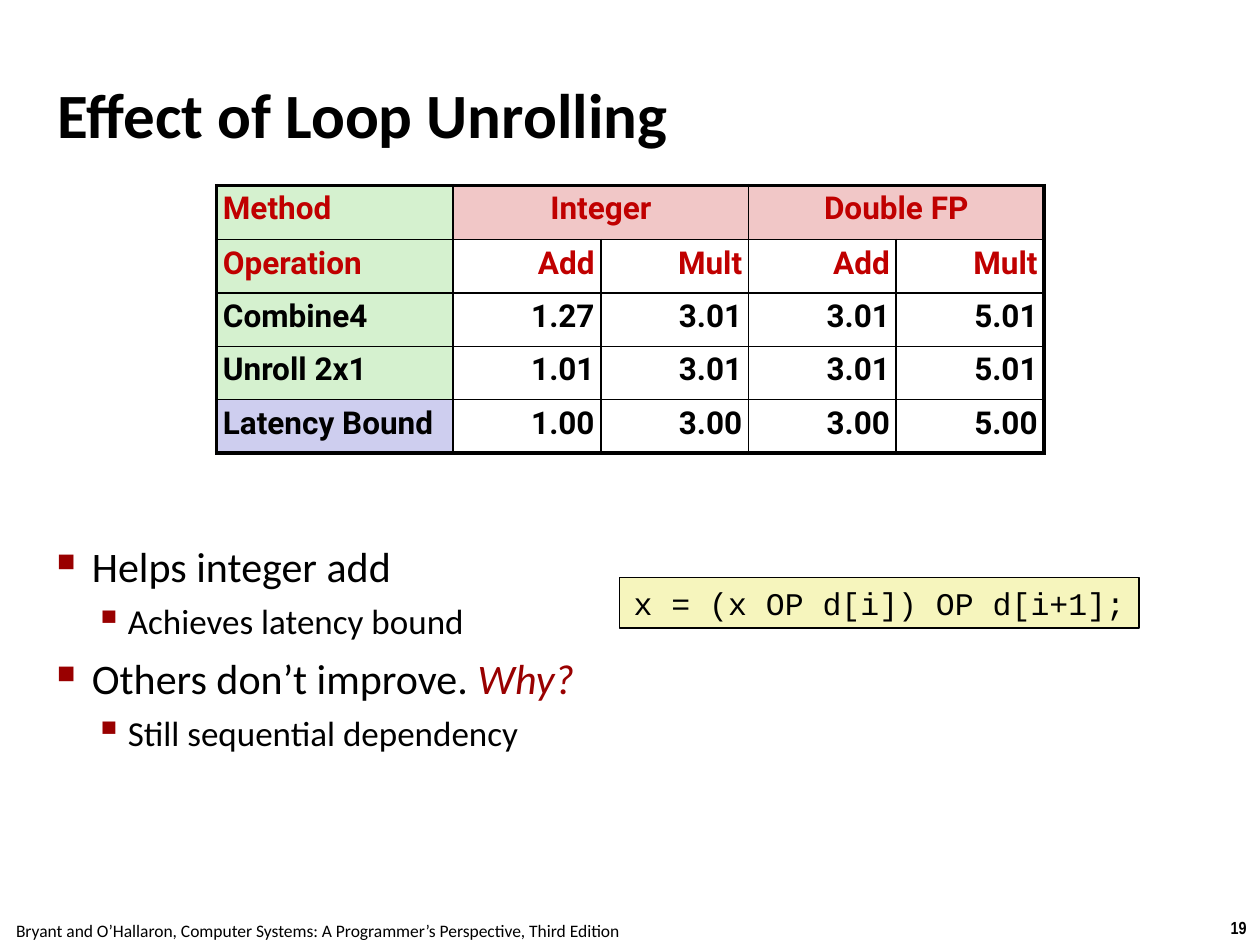
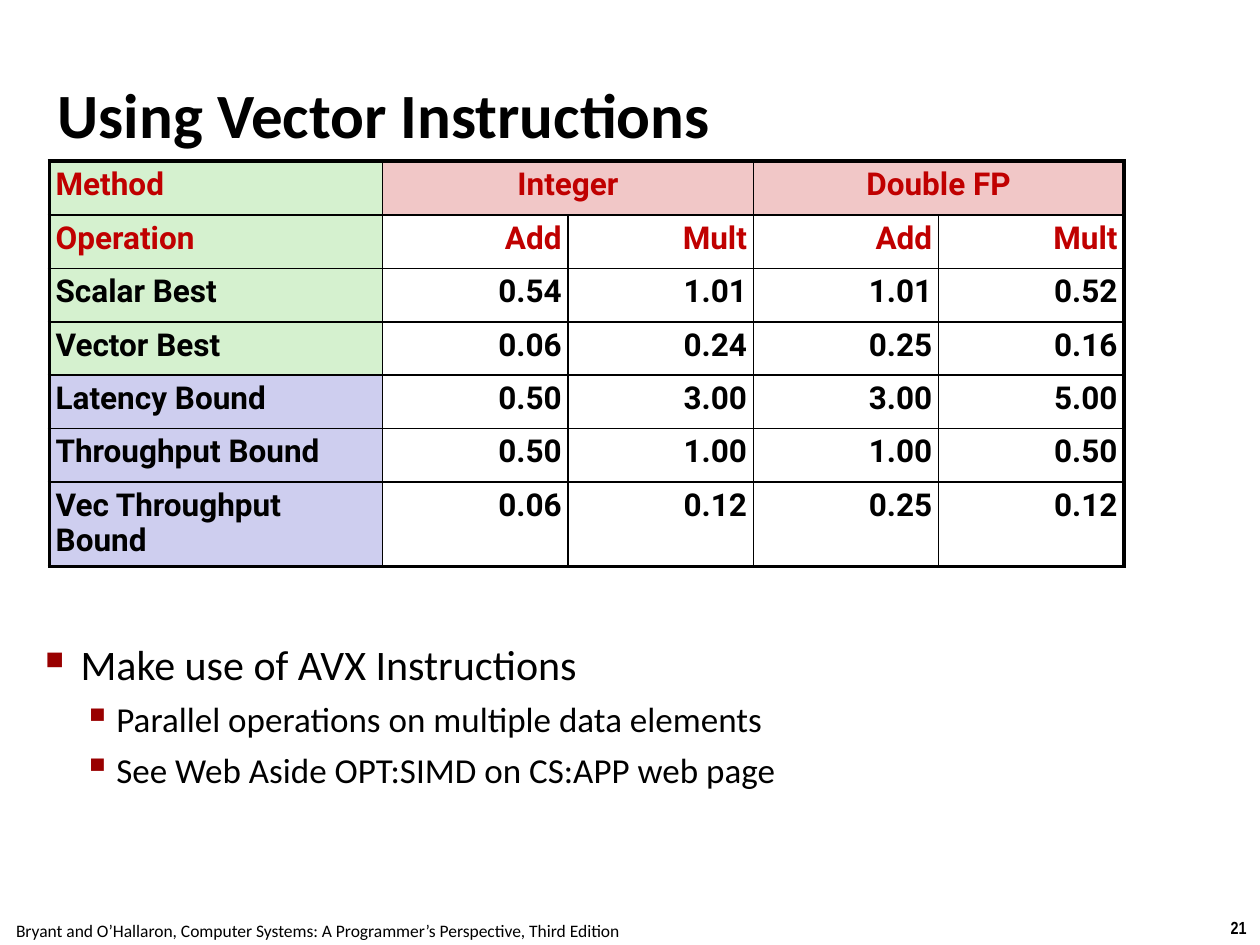
from lxml.etree import SubElement
from pptx import Presentation
from pptx.dml.color import RGBColor
from pptx.enum.shapes import MSO_SHAPE
from pptx.enum.text import MSO_ANCHOR, PP_ALIGN
from pptx.oxml.ns import qn
from pptx.util import Pt

BLACK = RGBColor(0x00, 0x00, 0x00)
CRIMSON = RGBColor(0x99, 0x00, 0x00)
HEADING_RED = RGBColor(0xC0, 0x00, 0x00)
GREEN = RGBColor(0xD5, 0xF1, 0xCF)
PINK = RGBColor(0xF1, 0xC7, 0xC7)
LAVENDER = RGBColor(0xCE, 0xCE, 0xEF)
CODE_YELLOW = RGBColor(0xF6, 0xF5, 0xBD)

FOOTER = "Bryant and O’Hallaron, Computer Systems: A Programmer’s Perspective, Third Edition"
HEADER_ROWS = [
    ["Method", "Integer", "", "Double FP", ""],
    ["Operation", "Add", "Mult", "Add", "Mult"],
]
BULLETS = [
    dict(symbol="■", scale="60000", size=24, before=6, margin=20, hang=-20),
    dict(symbol="▪", scale="110000", size=20, before=5, margin=40.5, hang=-19),
]

slides = [
    dict(
        title="Effect of Loop Unrolling",
        number="19",
        table_at=(123.8, 106),
        columns=(135.2, 84.4),
        heights=[31, 30.5, 30.5, 30.5, 30.5],
        results=[
            ["Combine4", "1.27", "3.01", "3.01", "5.01"],
            ["Unroll 2x1", "1.01", "3.01", "3.01", "5.01"],
            ["Latency Bound", "1.00", "3.00", "3.00", "5.00"],
        ],
        body_at=(29.5, 306, 654.5, 210),
        points=[
            (0, "Helps integer add", ""),
            (1, "Achieves latency bound", ""),
            (0, "Others don’t improve. ", "Why?"),
            (1, "Still sequential dependency", ""),
        ],
        code="x = (x OP d[i]) OP d[i+1];",
    ),
    dict(
        title="Using Vector Instructions",
        number="21",
        table_at=(28.2, 92),
        columns=(190.5, 105.9),
        heights=[31, 30.5, 30.5, 30.5, 30.5, 30.5, 47],
        results=[
            ["Scalar Best", "0.54", "1.01", "1.01", "0.52"],
            ["Vector Best", "0.06", "0.24", "0.25", "0.16"],
            ["Latency Bound", "0.50", "3.00", "3.00", "5.00"],
            ["Throughput Bound", "0.50", "1.00", "1.00", "0.50"],
            ["Vec Throughput Bound", "0.06", "0.12", "0.25", "0.12"],
        ],
        body_at=(23, 362, 654.5, 148),
        points=[
            (0, "Make use of AVX Instructions", ""),
            (1, "Parallel operations on multiple data elements", ""),
            (1, "See Web Aside OPT:SIMD on CS:APP web page", ""),
        ],
        code=None,
    ),
]


def write(paragraph, text, size, font="Calibri", color=BLACK, bold=False,
          italic=False, align=PP_ALIGN.LEFT):
    paragraph.alignment = align
    run = paragraph.add_run()
    run.text = text
    run.font.size = Pt(size)
    run.font.name = font
    run.font.color.rgb = color
    run.font.bold = bold
    run.font.italic = italic


def add_frame(slide, left, top, width, height, inset=None, wrap=True):
    frame = slide.shapes.add_textbox(Pt(left), Pt(top), Pt(width), Pt(height)).text_frame
    frame.word_wrap = wrap
    if inset is not None:
        frame.margin_left = frame.margin_right = Pt(inset)
        frame.margin_top = frame.margin_bottom = Pt(inset)
    return frame


prs = Presentation()
prs.slide_width, prs.slide_height = Pt(720), Pt(540)

for content in slides:
    slide = prs.slides.add_slide(prs.slide_layouts[6])

    number = add_frame(slide, 695.5, 520.5, 24.5, 19.5, wrap=False)
    write(number.paragraphs[0], content["number"], 10, font="Arial Narrow", bold=True,
          align=PP_ALIGN.CENTER)
    footer = add_frame(slide, -1.5, 522, 366, 19.5, wrap=False)
    write(footer.paragraphs[0], FOOTER, 10, align=PP_ALIGN.CENTER)

    title = add_frame(slide, 30, 20, 660, 90, inset=3)
    title.vertical_anchor = MSO_ANCHOR.MIDDLE
    write(title.paragraphs[0], content["title"], 36, bold=True)

    body = add_frame(slide, *content["body_at"], inset=3)
    for index, (level, text, question) in enumerate(content["points"]):
        bullet = BULLETS[level]
        point = body.add_paragraph() if index else body.paragraphs[0]
        point.level = level
        point.space_before = Pt(bullet["before"])
        write(point, text, bullet["size"])
        if question:
            write(point, question, bullet["size"], color=CRIMSON, italic=True)
        properties = point._p.get_or_add_pPr()
        properties.set("marL", str(Pt(bullet["margin"])))
        properties.set("indent", str(Pt(bullet["hang"])))
        bullet_color = SubElement(properties, qn("a:buClr"))
        SubElement(bullet_color, qn("a:srgbClr"), val=str(CRIMSON))
        SubElement(properties, qn("a:buSzPct"), val=bullet["scale"])
        SubElement(properties, qn("a:buChar"), char=bullet["symbol"])

    if content["code"]:
        code = slide.shapes.add_shape(MSO_SHAPE.RECTANGLE, Pt(354), Pt(330), Pt(297), Pt(29))
        code.shadow.inherit = False
        code.fill.solid()
        code.fill.fore_color.rgb = CODE_YELLOW
        code.line.color.rgb = BLACK
        code.line.width = Pt(1)
        code.text_frame.word_wrap = False
        code.text_frame.vertical_anchor = MSO_ANCHOR.TOP
        write(code.text_frame.paragraphs[0], content["code"], 18, font="Courier New",
              align=PP_ALIGN.CENTER)

    rows = HEADER_ROWS + content["results"]
    left, top = content["table_at"]
    label_width, value_width = content["columns"]
    widths = [label_width] + [value_width] * 4
    heights = content["heights"]
    table = slide.shapes.add_table(len(rows), len(widths), Pt(left), Pt(top),
                                   Pt(sum(widths)), Pt(sum(heights))).table
    table.first_row = table.horz_banding = False
    for column, width in zip(table.columns, widths):
        column.width = Pt(width)
    for row, height in zip(table.rows, heights):
        row.height = Pt(height)
    for first in (1, 3):
        table.cell(0, first).merge(table.cell(0, first + 1))

    for r, labels in enumerate(rows):
        for c, label in enumerate(labels):
            cell = table.cell(r, c)
            cell.margin_left = cell.margin_right = Pt(3.6)
            cell.margin_top = cell.margin_bottom = Pt(3.6)
            outer_edges = {
                "L": c == 0,
                "R": c + cell.span_width >= len(widths),
                "T": r == 0,
                "B": r == len(rows) - 1,
            }
            for side, outer in outer_edges.items():
                border = SubElement(cell._tc.get_or_add_tcPr(), qn(f"a:ln{side}"),
                                    w=str(Pt(2.25 if outer else 1)))
                ink = SubElement(border, qn("a:solidFill"))
                SubElement(ink, qn("a:srgbClr"), val=str(BLACK))

            if c == 0:
                fill, align = (LAVENDER if label.endswith("Bound") else GREEN), PP_ALIGN.LEFT
            elif r == 0:
                fill, align = PINK, PP_ALIGN.CENTER
            else:
                fill, align = None, PP_ALIGN.RIGHT
            if fill:
                cell.fill.solid()
                cell.fill.fore_color.rgb = fill
            else:
                cell.fill.background()
            if label:
                paragraph = cell.text_frame.paragraphs[0]
                paragraph.line_spacing = 0.95
                write(paragraph, label, 18, font="Roboto", bold=True, align=align,
                      color=HEADING_RED if r < len(HEADER_ROWS) else BLACK)

prs.save("out.pptx")
